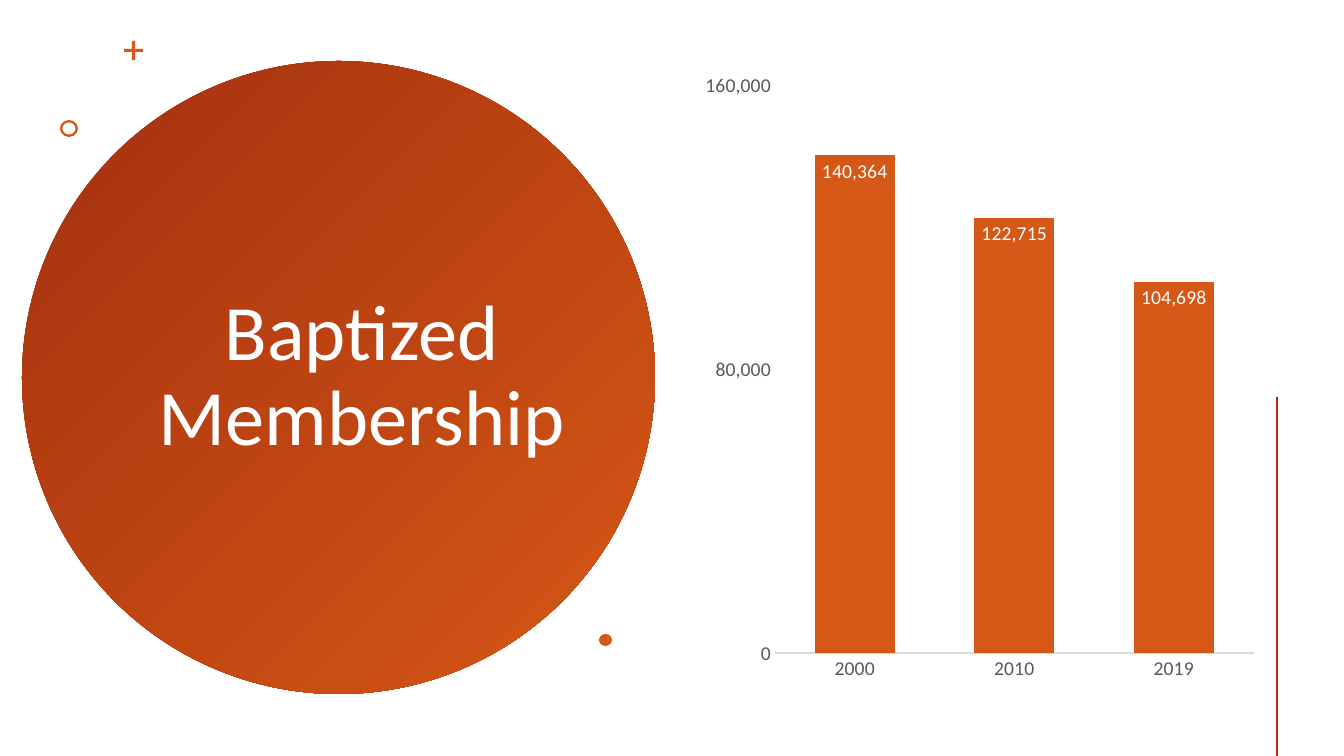
import pptx
import pptx.chart.data
import pptx.dml.color
import pptx.enum.chart
import pptx.enum.shapes
import pptx.enum.text
import pptx.oxml
import pptx.util

SLIDE_SIZE = (1344, 756)
FONT = "Calibri"
RUST, ORANGE, WHITE, GREY, PALE = "A5300F", "D55816", "FFFFFF", "595959", "D9D9D9"

TITLE = "Baptized Membership"
TITLE_BOX = (137, 142, 450, 471)
CIRCLE_BOX = (22, 61, 633, 633)
ORNAMENTS = [
    ("CROSS", (124, 41, 19, 19), 0.42),
    ("DONUT", (60, 120, 18, 17), 0.14),
    ("OVAL", (599, 634, 13, 12), None),
]
ACCENT_LINE = (1277, 397, 1277, 756)
CHART_BOX = (694, 61, 571, 633)
MEMBERSHIP = {"2000": 140364, "2010": 122715, "2019": 104698}
AXIS_MAXIMUM, AXIS_STEP = 160000, 80000


def px(value):
    return round(value * 914400 / 100.8)


def emu(box):
    return [px(value) for value in box]


def color(value):
    return pptx.dml.color.RGBColor.from_string(value)


def set_font(font, size, value):
    font.name = FONT
    font.size = pptx.util.Pt(size)
    font.color.rgb = color(value)


def add_shape(slide, kind, box):
    shape = slide.shapes.add_shape(pptx.enum.shapes.MSO_SHAPE[kind], *emu(box))
    shape.shadow.inherit = False
    shape.line.fill.background()
    return shape


def add_circle(slide):
    fill = add_shape(slide, "OVAL", CIRCLE_BOX).fill
    fill.gradient()
    fill.gradient_angle = 315
    for stop, value in zip(fill.gradient_stops, (RUST, ORANGE)):
        stop.color.rgb = color(value)


def add_title(slide):
    frame = slide.shapes.add_textbox(*emu(TITLE_BOX)).text_frame
    frame.word_wrap = True
    frame.vertical_anchor = pptx.enum.text.MSO_ANCHOR.MIDDLE
    paragraph = frame.paragraphs[0]
    paragraph.text = TITLE
    paragraph.alignment = pptx.enum.text.PP_ALIGN.CENTER
    paragraph.line_spacing = 0.9
    set_font(paragraph.font, 56, WHITE)


def add_ornaments(slide):
    for kind, box, thickness in ORNAMENTS:
        shape = add_shape(slide, kind, box)
        shape.fill.solid()
        shape.fill.fore_color.rgb = color(ORANGE)
        if thickness is not None:
            shape.adjustments[0] = thickness


def add_accent_line(slide):
    connector = slide.shapes.add_connector(
        pptx.enum.shapes.MSO_CONNECTOR.STRAIGHT, *emu(ACCENT_LINE))
    connector.line.color.rgb = color(RUST)
    connector.line.width = pptx.util.Pt(2)
    properties = connector.element.spPr
    properties.append(pptx.oxml.parse_xml(
        '<a:effectLst xmlns:a="http://schemas.openxmlformats.org/drawingml/2006/main"/>'))


def add_membership_chart(slide):
    data = pptx.chart.data.CategoryChartData(number_format="#,##0")
    data.categories = list(MEMBERSHIP)
    data.add_series("Series 1", list(MEMBERSHIP.values()))
    chart = slide.shapes.add_chart(
        pptx.enum.chart.XL_CHART_TYPE.COLUMN_CLUSTERED, *emu(CHART_BOX), data).chart
    chart.has_title = False
    chart.has_legend = False
    set_font(chart.font, 14, GREY)

    for axis in (chart.category_axis, chart.value_axis):
        axis.has_major_gridlines = False
        axis.major_tick_mark = pptx.enum.chart.XL_TICK_MARK.NONE
        axis.minor_tick_mark = pptx.enum.chart.XL_TICK_MARK.NONE
        set_font(axis.tick_labels.font, 14, GREY)
    chart.category_axis.format.line.color.rgb = color(PALE)
    chart.category_axis.format.line.width = pptx.util.Pt(1)
    value_axis = chart.value_axis
    value_axis.format.line.fill.background()
    value_axis.minimum_scale = 0
    value_axis.maximum_scale = AXIS_MAXIMUM
    value_axis.major_unit = AXIS_STEP
    value_axis.tick_labels.number_format = "#,##0"
    value_axis.tick_labels.number_format_is_linked = False

    plot = chart.plots[0]
    plot.vary_by_categories = False
    plot.gap_width = 100
    plot.overlap = -24
    series = plot.series[0]
    series.format.fill.solid()
    series.format.fill.fore_color.rgb = color(ORANGE)
    labels = series.data_labels
    labels.show_value = True
    labels.position = pptx.enum.chart.XL_LABEL_POSITION.INSIDE_END
    set_font(labels.font, 14, WHITE)


def main():
    presentation = pptx.Presentation()
    presentation.slide_width, presentation.slide_height = emu(SLIDE_SIZE)
    slide = presentation.slides.add_slide(presentation.slide_layouts[6])
    add_circle(slide)
    add_title(slide)
    add_ornaments(slide)
    add_accent_line(slide)
    add_membership_chart(slide)
    presentation.save("out.pptx")


if __name__ == "__main__":
    main()
